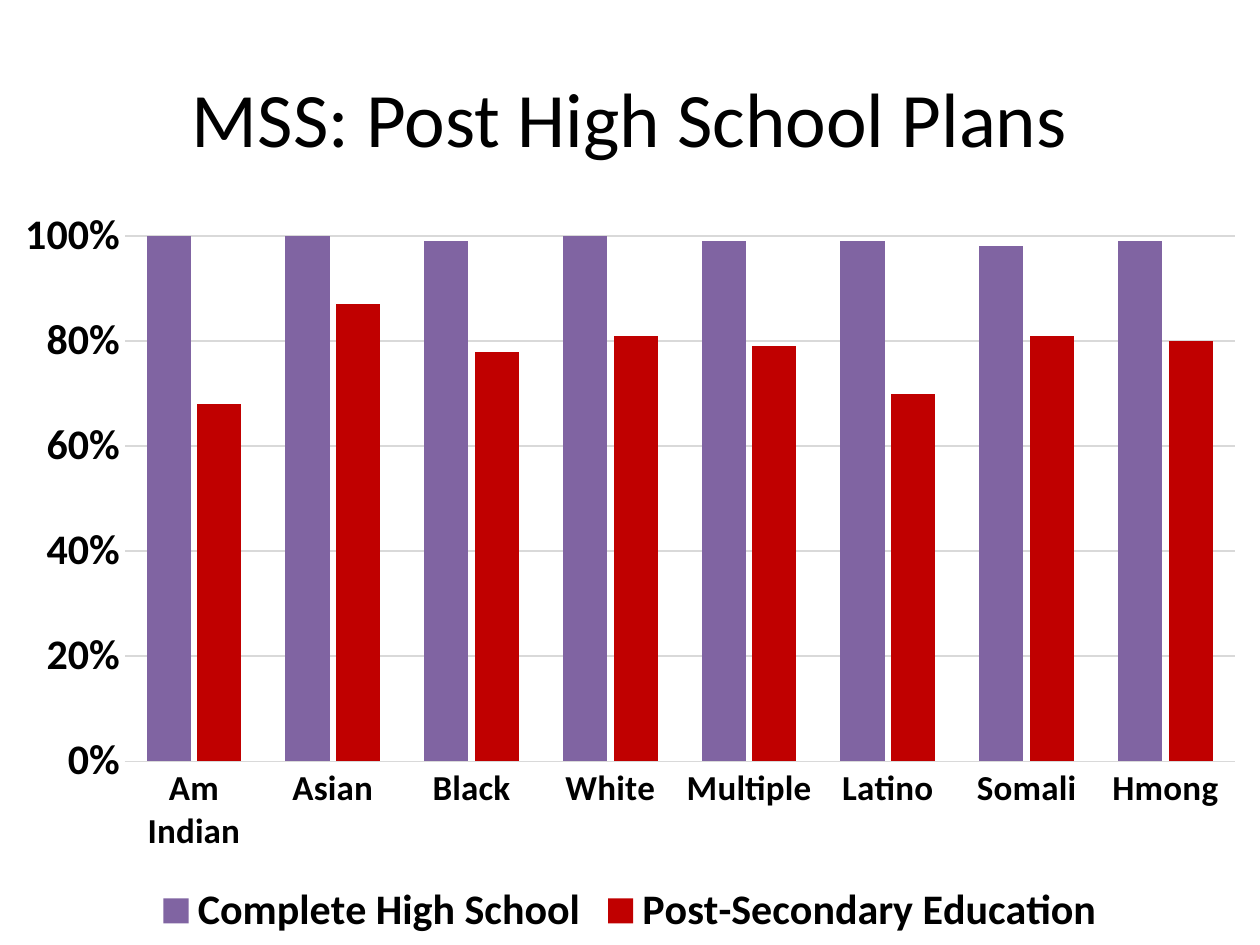
from dataclasses import dataclass

import pptx
import pptx.chart.data
import pptx.dml.color
import pptx.enum.chart
import pptx.enum.text
import pptx.util
from pptx.util import Cm


@dataclass(frozen=True)
class Theme:
    font: str = "Calibri"
    ink: str = "000000"
    grid: str = "D9D9D9"
    high_school: str = "8064A2"
    post_secondary: str = "C00000"
    title_size: int = 44
    label_size: int = 24
    category_size: int = 20
    line_width: float = 0.75


THEME = Theme()

GROUPS = ["Am Indian", "Asian", "Black", "White", "Multiple", "Latino", "Somali", "Hmong"]
PLANS = [
    ("Complete High School", THEME.high_school, [1, 1, 0.99, 1, 0.99, 0.99, 0.98, 0.99]),
    ("Post-Secondary Education", THEME.post_secondary,
     [0.68, 0.87, 0.78, 0.81, 0.79, 0.7, 0.81, 0.8]),
]


def rgb(code):
    return pptx.dml.color.RGBColor.from_string(code)


def style_font(font, size, bold=False, color=THEME.ink):
    font.name = THEME.font
    font.size = pptx.util.Pt(size)
    font.bold = bold
    font.color.rgb = rgb(color)


def style_line(line):
    line.color.rgb = rgb(THEME.grid)
    line.width = pptx.util.Pt(THEME.line_width)


def add_text(page, text, box, align=pptx.enum.text.PP_ALIGN.CENTER, **font_format):
    frame = page.shapes.add_textbox(*box).text_frame
    frame.word_wrap = True
    frame.vertical_anchor = pptx.enum.text.MSO_ANCHOR.MIDDLE
    para = frame.paragraphs[0]
    para.alignment = align
    span = para.add_run()
    span.text = text
    style_font(span.font, **font_format)


def style_axes(chart):
    groups, share = chart.category_axis, chart.value_axis
    for axis, size in ((groups, THEME.category_size), (share, THEME.label_size)):
        axis.major_tick_mark = pptx.enum.chart.XL_TICK_MARK.NONE
        axis.minor_tick_mark = pptx.enum.chart.XL_TICK_MARK.NONE
        style_font(axis.tick_labels.font, size, bold=True)
    style_line(groups.format.line)
    share.format.line.fill.background()
    share.minimum_scale, share.maximum_scale, share.major_unit = 0, 1, 0.2
    share.has_major_gridlines = True
    style_line(share.major_gridlines.format.line)
    share.tick_labels.number_format = "0%"
    share.tick_labels.number_format_is_linked = False


def add_plans_chart(page, box):
    data = pptx.chart.data.CategoryChartData(number_format="0%")
    data.categories = GROUPS
    for name, _, shares in PLANS:
        data.add_series(name, shares)
    chart = page.shapes.add_chart(
        pptx.enum.chart.XL_CHART_TYPE.COLUMN_CLUSTERED, *box, data).chart
    chart.has_title = False
    style_font(chart.font, THEME.label_size, bold=True)
    style_axes(chart)

    plot = chart.plots[0]
    plot.gap_width, plot.overlap = 100, -15
    plot.vary_by_categories = False
    for series, (_, color, _) in zip(plot.series, PLANS):
        series.format.fill.solid()
        series.format.fill.fore_color.rgb = rgb(color)

    chart.has_legend = True
    chart.legend.position = pptx.enum.chart.XL_LEGEND_POSITION.BOTTOM
    chart.legend.include_in_layout = False
    style_font(chart.legend.font, THEME.label_size, bold=True)


def build_plans_slide(deck):
    page = deck.slides.add_slide(deck.slide_layouts[6])
    margin, title_top, chart_top = Cm(1.27), Cm(0.76), Cm(3.94)
    add_text(page, "MSS: Post High School Plans",
             (margin, title_top, deck.slide_width - 2 * margin, chart_top - title_top),
             size=THEME.title_size)
    add_plans_chart(page, (0, chart_top, deck.slide_width, deck.slide_height - chart_top))


def main():
    deck = pptx.Presentation()
    deck.slide_width, deck.slide_height = Cm(25.4), Cm(19.05)
    build_plans_slide(deck)
    deck.save("out.pptx")


if __name__ == "__main__":
    main()
